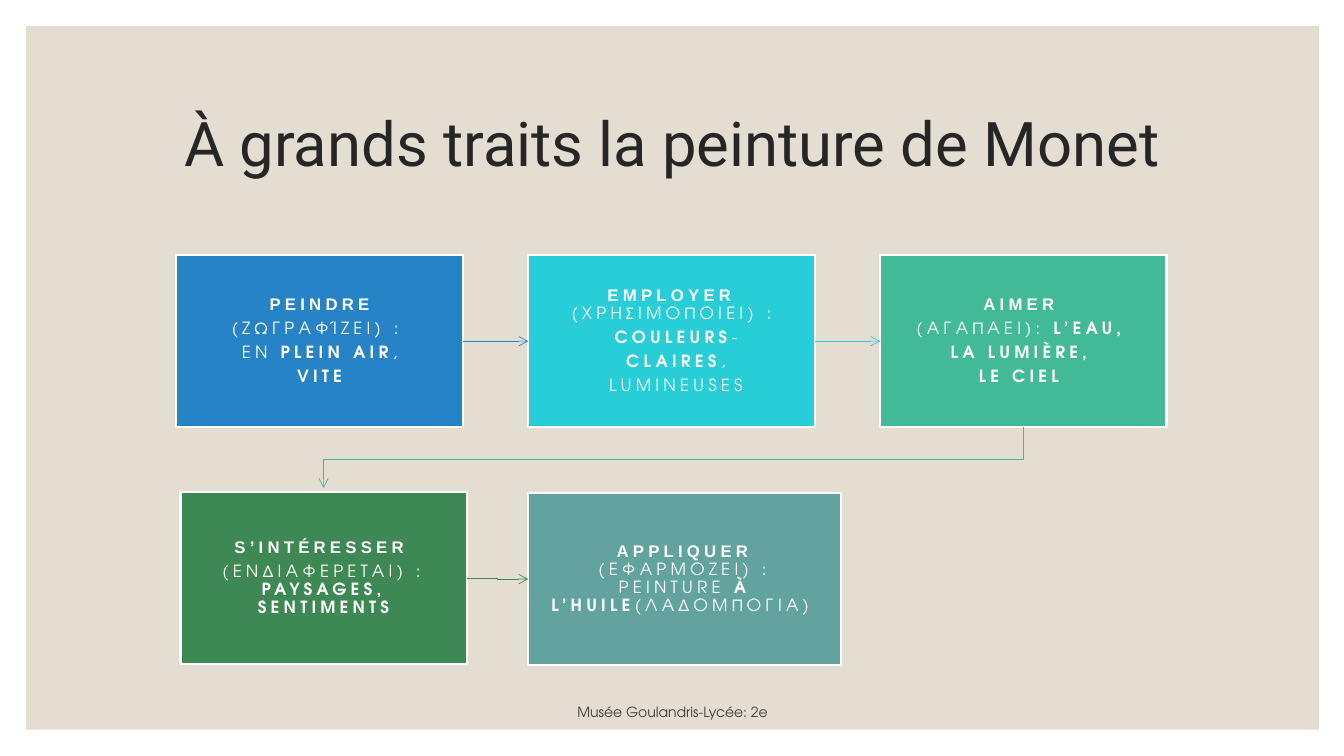
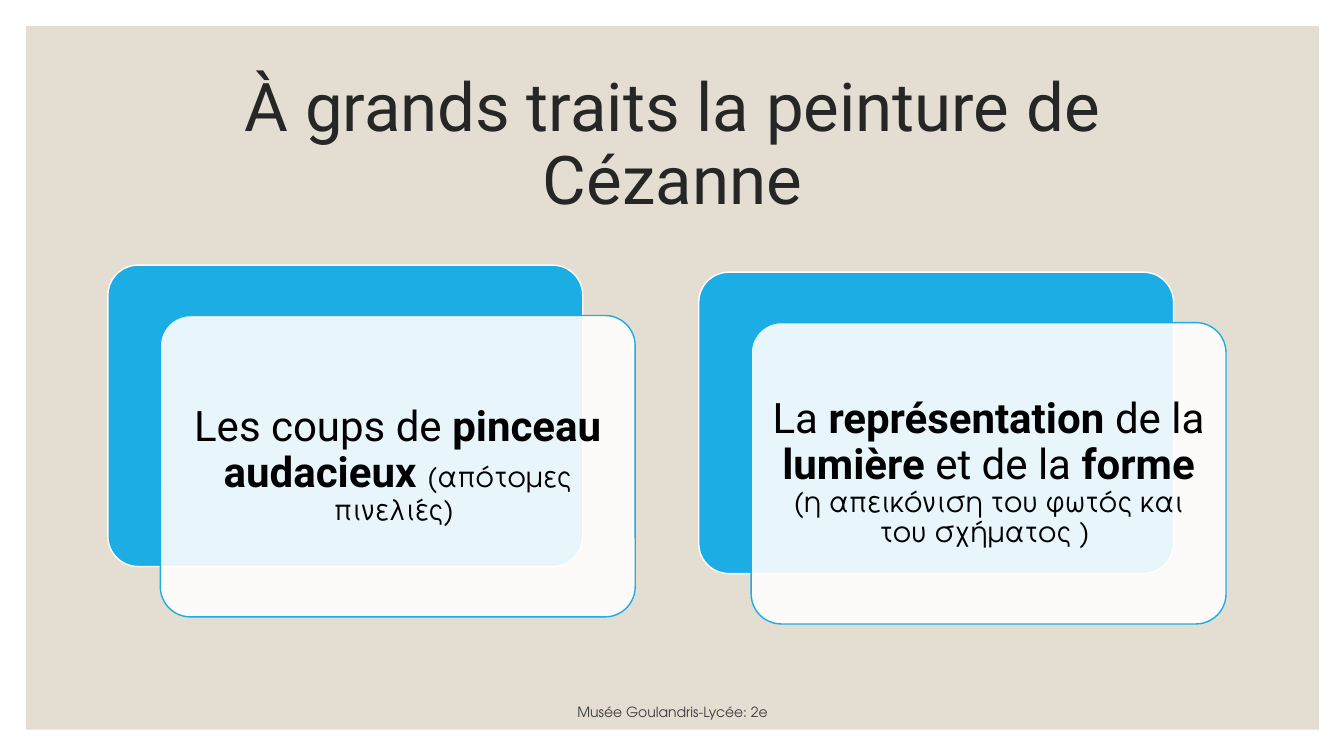
from lxml import etree
from pptx import Presentation
from pptx import util as u
from pptx.dml.color import RGBColor
from pptx.enum import shapes, text
from pptx.oxml.ns import qn

WHITE, INK, SAND, SKY = "FFFFFF", "262626", "E3DED1", "1CADE4"
SANS, ROUND, HEAD = "Roboto", "TeX Gyre Adventor", "Arial"
inch = u.Inches
color = RGBColor.from_string


def write(box, paragraphs, styles, inset=(0.1, 0.05), anchor=text.MSO_ANCHOR.MIDDLE,
          line=0.9, after=0):
    """Fill box with paragraphs, each a list of (style name, wording) pairs."""
    frame = box.text_frame
    frame.word_wrap = True
    frame.auto_size = text.MSO_AUTO_SIZE.NONE
    frame.vertical_anchor = anchor
    frame.margin_left = frame.margin_right = inch(inset[0])
    frame.margin_top = frame.margin_bottom = inch(inset[1])
    for index, spans in enumerate(paragraphs):
        para = frame.add_paragraph() if index else frame.paragraphs[0]
        para.alignment = text.PP_ALIGN.CENTER
        para.line_spacing = line
        para.space_before, para.space_after = u.Pt(0), u.Pt(after)
        for name, wording in spans:
            font_name, size, hue, bold, tracking = styles[name]
            span = para.add_run()
            span.text = wording
            span.font.name, span.font.size, span.font.bold = font_name, u.Pt(size), bold
            span.font.color.rgb = color(hue)
            if tracking:
                span.font._element.set("spc", str(tracking * 100))


def paint(item, line, width, fill=None, arrow=False):
    """Set outline and fill, and drop the shadow; arrow adds a head at the end."""
    if line:
        item.line.color.rgb = color(line)
        item.line.width = u.Pt(width)
    else:
        item.line.fill.background()
    if fill:
        item.fill.solid()
        item.fill.fore_color.rgb = color(fill)
    if arrow:
        etree.SubElement(item.line._get_or_add_ln(), qn("a:tailEnd"), type="arrow")
    properties = item._element.spPr
    if properties.find(qn("a:effectLst")) is None:
        etree.SubElement(properties, qn("a:effectLst"))


deck = Presentation()
deck.slide_width, deck.slide_height = inch(13.33), inch(7.5)
layout = deck.slide_layouts[5]
layout_title = layout.placeholders[0]
layout_title.left, layout_title.top = inch(1.17), inch(0.7)
layout_title.width, layout_title.height = inch(11), inch(1.5)

# Title and footer of both pages
pages = []
for heading, size in [("À grands traits la peinture de Monet", 44),
                      ("À grands traits la peinture de Cézanne", 48)]:
    page = deck.slides.add_slide(layout)
    write(page.shapes.title, [[("title", heading)]],
          {"title": (SANS, size, INK, False, 0)})
    footer = page.shapes.add_textbox(inch(3.82), inch(6.9), inch(5.7), inch(0.3))
    write(footer, [[("footer", "Musée Goulandris-Lycée: 2e")]],
          {"footer": (ROUND, 10, "404040", False, 0)},
          anchor=text.MSO_ANCHOR.BOTTOM, line=1)
    pages.append(page)
monet, cezanne = pages

# The sand panel belongs to the layout
panel = monet.shapes.add_shape(shapes.MSO_SHAPE.RECTANGLE, inch(0.26), inch(0.26),
                               inch(12.82), inch(6.98))
paint(panel, None, 0, SAND)
layout.shapes.element.insert(2, panel._element)

# Monet: five steps on a grid of three columns and two rows
LEFT, TOP, COLUMN, ROW = 1.75, 2.53, 3.49, 2.35
STEP_WIDTH, STEP_HEIGHT = 2.84, 1.71
step_styles = {
    "head": (HEAD, 12, WHITE, True, 3),
    "plain": (ROUND, 12, WHITE, False, 3),
    "strong": (ROUND, 12, WHITE, True, 3),
}
# column, row, shift right, shift down, extra width, fill, paragraphs
steps = [
    (0, 0, 0, 0, 0, "2683C6", [
        [("head", "PEINDRE")],
        [("plain", "(ΖΩΓΡΑΦΊΖΕΙ) : ")],
        [("plain", "EN "), ("strong", "PLEIN AIR"), ("plain", ",")],
        [("strong", "VITE")]]),
    (1, 0, 0, 0, 0, "27CED7", [
        [("head", "EMPLOYER"), ("plain", " (ΧΡΗΣΙΜΟΠΟΙΕΙ) :")],
        [("plain", " "), ("strong", "COULEURS"), ("plain", "-")],
        [("plain", " "), ("strong", "CLAIRES"), ("plain", ",")],
        [("plain", " LUMINEUSES")]]),
    (2, 0, 0, 0, 0, "42BA97", [
        [("head", "AIMER ")],
        [("plain", "(ΑΓΑΠΑΕΙ): "), ("strong", "L’EAU, ")],
        [("strong", "LA LUMIÈRE, ")],
        [("strong", "LE CIEL ")]]),
    (0, 1, 0.04, 0, 0, "3E8853", [
        [("head", "S’INTÉRESSER ")],
        [("plain", "(ΕΝΔΙΑΦΕΡΕΤΑΙ) : "), ("strong", "PAYSAGES, SENTIMENTS")]]),
    (1, 1, 0, 0.01, 0.26, "62A39F", [
        [("head", "APPLIQUER"), ("plain", " (ΕΦΑΡΜΟΖΕΙ) : PEINTURE "),
         ("strong", "À L’HUILE"), ("plain", "(ΛΑΔΟΜΠΟΓΙΑ) ")]]),
]
boxes = []
for column, row, right, down, extra, fill, paragraphs in steps:
    box = monet.shapes.add_shape(
        shapes.MSO_SHAPE.RECTANGLE,
        inch(LEFT + column * COLUMN + right), inch(TOP + row * ROW + down),
        inch(STEP_WIDTH + extra), inch(STEP_HEIGHT))
    paint(box, WHITE, 1.5, fill)
    write(box, paragraphs, step_styles, inset=(0.14, 0.15), after=4.2)
    boxes.append(box)

for start, end, kind in [(0, 1, shapes.MSO_CONNECTOR.STRAIGHT),
                         (1, 2, shapes.MSO_CONNECTOR.STRAIGHT),
                         (3, 4, shapes.MSO_CONNECTOR.ELBOW)]:
    arrow = monet.shapes.add_connector(kind, 0, 0, 0, 0)
    arrow.begin_connect(boxes[start], 3)
    arrow.end_connect(boxes[end], 1)
    paint(arrow, steps[start][5], 0.5, arrow=True)

# Return arrow from the end of the first row to the start of the second
start_x = boxes[2].left + boxes[2].width // 2
end_x = boxes[3].left + boxes[3].width // 2
bend_y = inch(4.56)
builder = monet.shapes.build_freeform(start_x, boxes[2].top + boxes[2].height)
builder.add_line_segments([(start_x, bend_y), (end_x, bend_y),
                           (end_x, boxes[3].top - inch(0.04))], close=False)
return_arrow = builder.convert_to_shape()
return_arrow.fill.background()
paint(return_arrow, steps[2][5], 0.5, arrow=True)

# Cézanne: two cards, each a blue back with a translucent front
CARD_WIDTH, CARD_HEIGHT = 4.71, 2.99
card_styles = {
    "plain": (SANS, 30, "000000", False, 0),
    "strong": (SANS, 30, "000000", True, 0),
    "greek": (ROUND, 20, "000000", False, 0),
}
cards = [
    (1.07, 2.63, [("plain", "Les coups de "), ("strong", "pinceau audacieux "),
                  ("greek", "(απότομες πινελιές) ")]),
    (6.93, 2.7, [("plain", "La "), ("strong", "représentation"), ("plain", " de la "),
                 ("strong", "lumière"), ("plain", " et de la "), ("strong", "forme "),
                 ("greek", "(η απεικόνιση του φωτός και του σχήματος ) ")]),
]
for left, top, spans in cards:
    for shift_x, shift_y, line, fill in [(0, 0, WHITE, SKY), (0.52, 0.5, SKY, WHITE)]:
        card = cezanne.shapes.add_shape(
            shapes.MSO_SHAPE.ROUNDED_RECTANGLE, inch(left + shift_x),
            inch(top + shift_y), inch(CARD_WIDTH), inch(CARD_HEIGHT))
        card.adjustments[0] = 0.1
        paint(card, line, 1, fill)
    # The last card drawn is the front one
    tint = card._element.spPr.find(qn("a:solidFill")).find(qn("a:srgbClr"))
    etree.SubElement(tint, qn("a:alpha"), val="90000")
    write(card, [spans], card_styles, inset=(0.12, 0.12), after=10.5)

deck.save("out.pptx")
